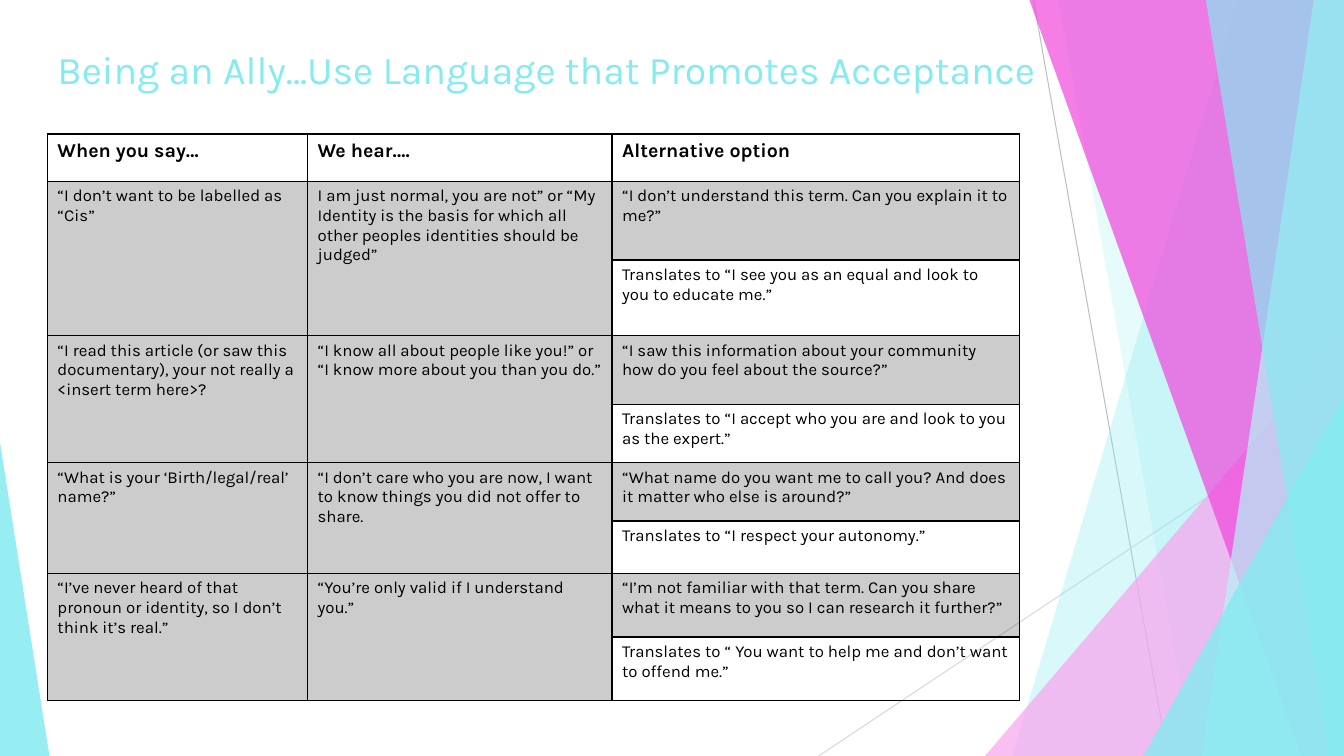
from lxml import etree
from pptx import Presentation
from pptx.dml.color import RGBColor
from pptx.enum.shapes import MSO_CONNECTOR, MSO_SHAPE
from pptx.enum.text import MSO_ANCHOR, MSO_AUTO_SIZE, PP_ALIGN
from pptx.oxml.ns import qn
from pptx.util import Inches, Pt

STRAIGHT = MSO_CONNECTOR.STRAIGHT
TRIANGLE = MSO_SHAPE.ISOSCELES_TRIANGLE
TOP = MSO_ANCHOR.TOP
LEFT = PP_ALIGN.LEFT
NO_AUTOFIT = MSO_AUTO_SIZE.NONE

AQUA = RGBColor(0x84, 0xEB, 0xF0)
PALE_AQUA = RGBColor(0xB5, 0xF3, 0xF6)
MAGENTA = RGBColor(0xF0, 0x46, 0xDC)
PINK = RGBColor(0xF8, 0xA6, 0xEE)
GREY = RGBColor(0xBF, 0xBF, 0xBF)
LIGHT_GREY = RGBColor(0xD9, 0xD9, 0xD9)
BLACK = RGBColor(0, 0, 0)
FONT = "Karla"

TITLE = "Being an Ally…Use Language that Promotes Acceptance"
HEADINGS = ("When you say…", "We hear….", "Alternative option")
# said, heard, alternative, translation of the alternative
PHRASES = [
    ("“I don’t want to be labelled as “Cis”",
     "I am just normal, you are not” or “My Identity is the basis for which all "
     "other peoples identities should be judged”",
     "“I don’t understand this term. Can you explain it to me?”",
     "Translates to “I see you as an equal and look to you to educate me.”"),
    ("“I read this article (or saw this documentary), your not really a "
     "<insert term here>?",
     "“I know all about people like you!” or “I know more about you than you do.”",
     "“I saw this information about your community how do you feel about the source?”",
     "Translates to “I accept who you are and look to you as the expert.”"),
    ("“What is your ‘Birth/legal/real’ name?”",
     "“I don’t care who you are now, I want to know things you did not offer to share.",
     "“What name do you want me to call you? And does it matter who else is around?”",
     "Translates to “I respect your autonomy.”"),
    ("“I’ve never heard of that pronoun or identity, so I don’t think it’s real.”",
     "“You’re only valid if I understand you.”",
     "“I’m not familiar with that term. Can you share what it means to you so I can "
     "research it further?”",
     "Translates to “ You want to help me and don’t want to offend me.”"),
]

WIDTH, HEIGHT = 13.33, 7.5
MARGIN = 0.47
COLUMNS = (2.58, 3.02, 4.04)
ROWS = (0.47, 0.78, 0.75, 0.68, 0.58, 0.58, 0.52, 0.63, 0.63)

# start x, start y, end x, end y, colour
RAYS = [(10.25, 0, 11.58, HEIGHT, GREY), (WIDTH, 4.03, 8.12, HEIGHT, LIGHT_GREY)]
# Bands run to the right edge: x at the top, x at the bottom, colour, opacity %
BACK_BANDS = [(12.28, 10.04, AQUA, 30), (10.5, 11.83, AQUA, 20)]
FRONT_BANDS = [(10.21, 12.91, MAGENTA, 70), (13.03, 11.92, PALE_AQUA, 70),
               (11.96, 13.18, AQUA, 65)]
# Corners stand on the bottom edge: left, width, height, apex share, colour, opacity %
PINK_CORNER = (9.77, 3.56, 4.17, 1, PINK, 72)
AQUA_CORNERS = [(11.34, 1.99, 3.57, 1, AQUA, 80), (0, 0.49, 3.11, 0, AQUA, 85)]


def set_fill(fill, properties, colour, opacity):
    fill.solid()
    fill.fore_color.rgb = colour
    tint = properties.find(qn("a:solidFill")).find(qn("a:srgbClr"))
    etree.SubElement(tint, qn("a:alpha")).set("val", str(opacity * 1000))


def finish_facet(facet, colour, opacity):
    facet.shadow.inherit = False
    set_fill(facet.fill, facet._element.spPr, colour, opacity)
    facet.line.fill.background()


def add_ray(slide, x1, y1, x2, y2, colour):
    ray = slide.shapes.add_connector(STRAIGHT, *map(Inches, (x1, y1, x2, y2)))
    ray.line.color.rgb = colour
    ray.line.width = Pt(0.75)
    etree.SubElement(ray._element.spPr, qn("a:effectLst"))


def add_band(slide, top_x, bottom_x, colour, opacity):
    outline = slide.shapes.build_freeform(Inches(top_x), 0)
    corners = [(WIDTH, 0), (WIDTH, HEIGHT), (bottom_x, HEIGHT)]
    outline.add_line_segments([(Inches(x), Inches(y)) for x, y in corners], close=True)
    finish_facet(outline.convert_to_shape(), colour, opacity)


def add_corner(slide, left, width, height, apex, colour, opacity):
    corner = slide.shapes.add_shape(
        TRIANGLE, *map(Inches, (left, HEIGHT - height, width, height)))
    corner.adjustments[0] = apex
    finish_facet(corner, colour, opacity)


def write(frame, text, **font_format):
    frame.text = text
    paragraph = frame.paragraphs[0]
    paragraph.alignment = LEFT
    font = paragraph.runs[0].font
    font.color.rgb = font_format.pop("colour")
    for name, value in {"name": FONT, **font_format}.items():
        setattr(font, name, value)


def add_borders(cell):
    properties = cell._tc.get_or_add_tcPr()
    for position, side in enumerate(("lnL", "lnR", "lnT", "lnB")):
        border = etree.Element(qn(f"a:{side}"), w=str(Pt(1)))
        paint = etree.SubElement(border, qn("a:solidFill"))
        etree.SubElement(paint, qn("a:srgbClr"), val=str(BLACK))
        properties.insert(position, border)


def add_phrase_table(slide):
    table = slide.shapes.add_table(
        len(ROWS), len(COLUMNS), Inches(MARGIN), Inches(1.33),
        Inches(sum(COLUMNS)), Inches(sum(ROWS))).table
    table.first_row = table.horz_banding = False
    for column, width in zip(table.columns, COLUMNS):
        column.width = Inches(width)
    for row, height in zip(table.rows, ROWS):
        row.height = Inches(height)

    for column, heading in enumerate(HEADINGS):
        write(table.cell(0, column).text_frame, heading,
              size=Pt(14), bold=True, colour=BLACK)
    shaded = set()
    for index, (*main, translation) in enumerate(PHRASES):
        row = 1 + 2 * index
        for column in range(2):
            table.cell(row, column).merge(table.cell(row + 1, column))
        for column, phrase in enumerate(main):
            write(table.cell(row, column).text_frame, phrase, size=Pt(12), colour=BLACK)
            shaded.add((row, column))
        write(table.cell(row + 1, 2).text_frame, translation, size=Pt(12), colour=BLACK)

    for row in range(len(ROWS)):
        for column in range(len(COLUMNS)):
            cell = table.cell(row, column)
            if (row, column) in shaded:
                set_fill(cell.fill, cell._tc.get_or_add_tcPr(), BLACK, 20)
            else:
                cell.fill.background()
            add_borders(cell)


def place_title(slide):
    title = slide.shapes.title
    box = {"left": MARGIN, "top": 0.4, "width": 10.21, "height": 0.81}
    for name, value in box.items():
        setattr(title, name, Inches(value))
    frame = title.text_frame
    write(frame, TITLE, size=Pt(28), colour=AQUA)
    frame.auto_size = NO_AUTOFIT
    frame.vertical_anchor = TOP
    slide.shapes._spTree.append(title._element)  # in front of the facets


def main():
    deck = Presentation()
    deck.slide_width, deck.slide_height = Inches(WIDTH), Inches(HEIGHT)
    slide = deck.slides.add_slide(deck.slide_layouts.get_by_name("Title Only"))
    for ray in RAYS:
        add_ray(slide, *ray)
    for band in BACK_BANDS:
        add_band(slide, *band)
    add_corner(slide, *PINK_CORNER)
    for band in FRONT_BANDS:
        add_band(slide, *band)
    for corner in AQUA_CORNERS:
        add_corner(slide, *corner)
    place_title(slide)
    add_phrase_table(slide)
    deck.save("out.pptx")


if __name__ == "__main__":
    main()
